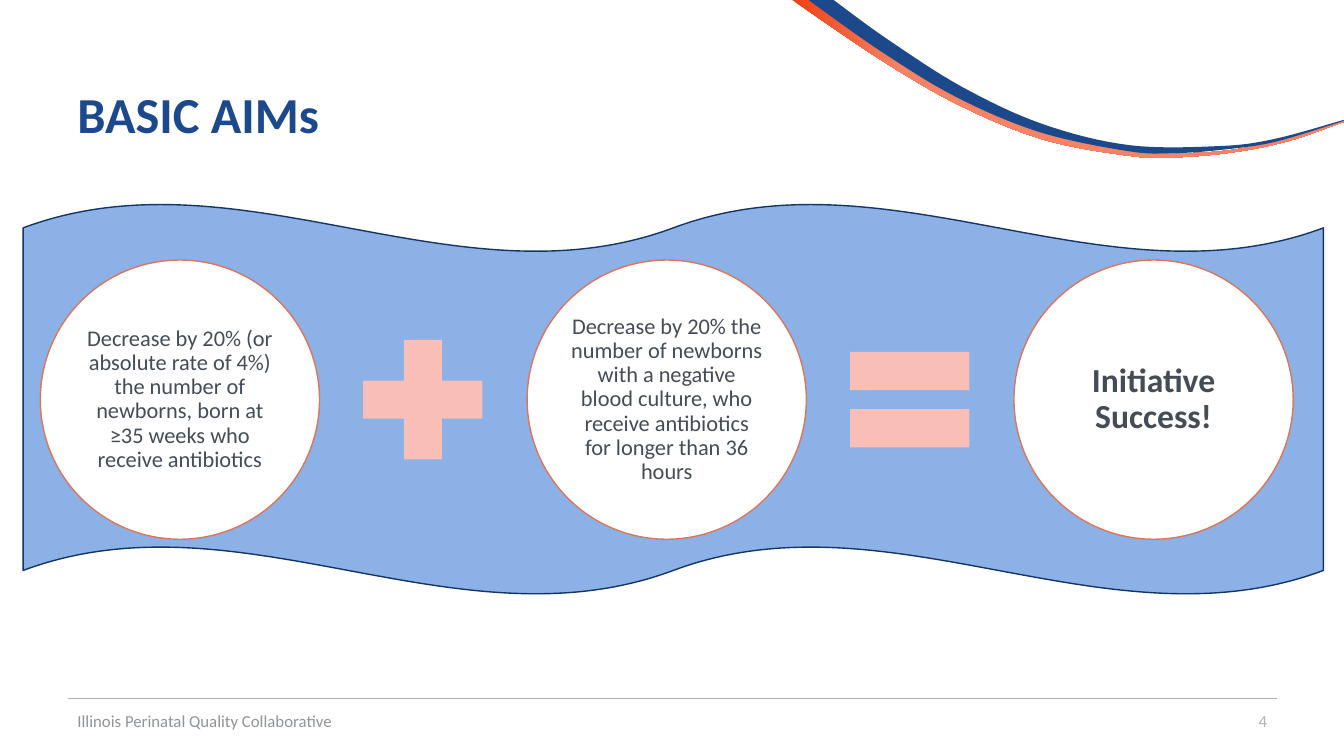
from lxml import etree
from pptx import Presentation
from pptx.dml.color import RGBColor
from pptx.enum.shapes import MSO_CONNECTOR as Connector, MSO_SHAPE as Shape
from pptx.enum.text import MSO_ANCHOR as Anchor, PP_ALIGN as Align
from pptx.oxml.ns import qn
from pptx.util import Pt

PX = 9144
FONT = "Calibri"
WHITE = RGBColor(0xFF, 0xFF, 0xFF)
NAVY = RGBColor(0x1C, 0x49, 0x8B)
WAVE_FILL = RGBColor(0x8C, 0xB1, 0xE7)
WAVE_LINE = RGBColor(0x14, 0x35, 0x65)
ORANGE = RGBColor(0xEF, 0x41, 0x14)
CORAL = RGBColor(0xF5, 0x83, 0x66)
CIRCLE_LINE = RGBColor(0xDB, 0x75, 0x5B)
PINK = RGBColor(0xF9, 0xBE, 0xB5)
BODY_TEXT = RGBColor(0x44, 0x4C, 0x55)
FOOTER_TEXT = RGBColor(0x91, 0x94, 0x97)
LIGHT_GRAY = RGBColor(0xAE, 0xB3, 0xB7)

BLUE_TOP = [(827, 0), (879, 38), (954, 86), (1034, 123), (1120, 144),
            (1209, 145), (1264, 138), (1333, 119)]
BLUE_BOTTOM = [(802, 0), (871, 49), (948, 96), (1031, 131), (1119, 150),
               (1164, 152), (1209, 149), (1264, 141), (1333, 120)]
ORANGE_TOP = [(805, 0), (882, 54), (958, 99), (1039, 133), (1125, 150),
              (1179, 152), (1234, 147), (1293, 133), (1333, 120)]
ORANGE_BOTTOM = [(786, 0), (878, 62), (955, 106), (1037, 139), (1124, 155),
                 (1169, 156), (1224, 151), (1278, 140), (1333, 121)]

AIMS = [
    ("Decrease by 20% (or absolute rate of 4%) the number of newborns, "
     "born at ≥35 weeks who receive antibiotics", 16, False),
    ("Decrease by 20% the number of newborns with a negative blood culture, "
     "who receive antibiotics for longer than 36 hours", 16, False),
    ("Initiative Success!", 24, True),
]
OPERATORS = [(Shape.MATH_PLUS, [0.235]), (Shape.MATH_EQUAL, [0.235, 0.118])]


def smooth_curve(points, steps=8):
    """Return points along a Catmull-Rom curve through the given points."""
    padded = [points[0], *points, points[-1]]
    curve = []
    for a, b, c, d in zip(padded, padded[1:], padded[2:], padded[3:]):
        for step in range(steps):
            t = step / steps
            curve.append(tuple(
                (2 * q + (r - p) * t + (2 * p - 5 * q + 4 * r - s) * t**2
                 + (3 * q - p - 3 * r + s) * t**3) / 2
                for p, q, r, s in zip(a, b, c, d)))
    return curve + [points[-1]]


def add_ribbon(page, top, bottom):
    """Draw a borderless ribbon between two curved edges."""
    outline = [(round(x * PX), round(y * PX))
               for x, y in smooth_curve(top) + smooth_curve(bottom)[::-1]]
    builder = page.shapes.build_freeform(*outline[0])
    builder.add_line_segments(outline[1:], close=True)
    ribbon = builder.convert_to_shape()
    ribbon.shadow.inherit = False
    ribbon.line.fill.background()
    return ribbon.fill


def add_swoosh(page):
    """Draw the two-colour swoosh in the top right corner."""
    fill = add_ribbon(page, ORANGE_TOP, ORANGE_BOTTOM)
    fill.gradient()
    fill.gradient_angle = 0
    for stop, color, position in zip(fill.gradient_stops, (ORANGE, CORAL), (0, 0.2)):
        stop.color.rgb = color
        stop.position = position
    fill = add_ribbon(page, BLUE_TOP, BLUE_BOTTOM)
    fill.solid()
    fill.fore_color.rgb = NAVY


def add_shape(page, kind, box, color, line=None, adjustments=()):
    """Add a filled preset shape in the given box."""
    shape = page.shapes.add_shape(kind, *(n * PX for n in box))
    shape.shadow.inherit = False
    shape.fill.solid()
    shape.fill.fore_color.rgb = color
    if line is None:
        shape.line.fill.background()
    else:
        shape.line.color.rgb = line
        shape.line.width = Pt(1)
    for index, value in enumerate(adjustments):
        shape.adjustments[index] = value
    return shape


def write(shape, text, size, color, bold=False, align=Align.LEFT):
    """Write one vertically centred paragraph into a shape."""
    frame = shape.text_frame
    frame.word_wrap = True
    frame.vertical_anchor = Anchor.MIDDLE
    para = frame.paragraphs[0]
    para.text = text
    para.alignment = align
    para.font.name = FONT
    para.font.size = Pt(size)
    para.font.bold = bold
    para.font.color.rgb = color
    return para


def add_label(page, box, *style, **options):
    """Add a text box holding one line of text."""
    write(page.shapes.add_textbox(*(n * PX for n in box)), *style, **options)


def add_aims(page, left, top, width, height):
    """Draw the wave with the equation of circles and operators on it."""
    add_shape(page, Shape.DOUBLE_WAVE, (left, top, width, height),
              WAVE_FILL, WAVE_LINE, [0.062, 0])
    circle, sign, step = 277, 161, 483
    middle = top + height // 2
    first = left + 17
    for index, (text, size, bold) in enumerate(AIMS):
        box = (first + index * step, middle - circle // 2, circle, circle)
        shape = add_shape(page, Shape.OVAL, box, WHITE, CIRCLE_LINE)
        frame = shape.text_frame
        frame.margin_left = frame.margin_right = 2 * PX
        frame.margin_top = frame.margin_bottom = 2 * PX
        para = write(shape, text, size, BODY_TEXT, bold, Align.CENTER)
        para.line_spacing = 0.9
    for index, (kind, adjustments) in enumerate(OPERATORS):
        x = first + index * step + (circle + step - sign) // 2
        add_shape(page, kind, (x, middle - sign // 2, sign, sign), PINK,
                  adjustments=adjustments)


def add_footer(page, left, top, width):
    """Draw the footer rule, organisation name and page number."""
    rule = page.shapes.add_connector(
        Connector.STRAIGHT, left * PX, top * PX, (left + width) * PX, top * PX)
    rule.line.color.rgb = LIGHT_GRAY
    rule.line.width = Pt(0.75)
    etree.SubElement(rule.element.spPr, qn("a:effectLst"))
    add_label(page, (left + width - 300, top + 2, 300, 40), "4", 12, LIGHT_GRAY,
              align=Align.RIGHT)
    add_label(page, (left, top + 2, 450, 40),
              "Illinois Perinatal Quality Collaborative", 12, FOOTER_TEXT)


def main():
    """Build the slide and save the deck."""
    deck = Presentation()
    deck.slide_width, deck.slide_height = 12192000, 750 * PX
    page = deck.slides.add_slide(deck.slide_layouts[6])
    add_swoosh(page)
    add_label(page, (67, 40, 1200, 145), "BASIC AIMs", 36, NAVY, bold=True)
    add_aims(page, 23, 202, 1290, 388)
    add_footer(page, 67, 693, 1200)
    deck.save("out.pptx")


if __name__ == "__main__":
    main()
